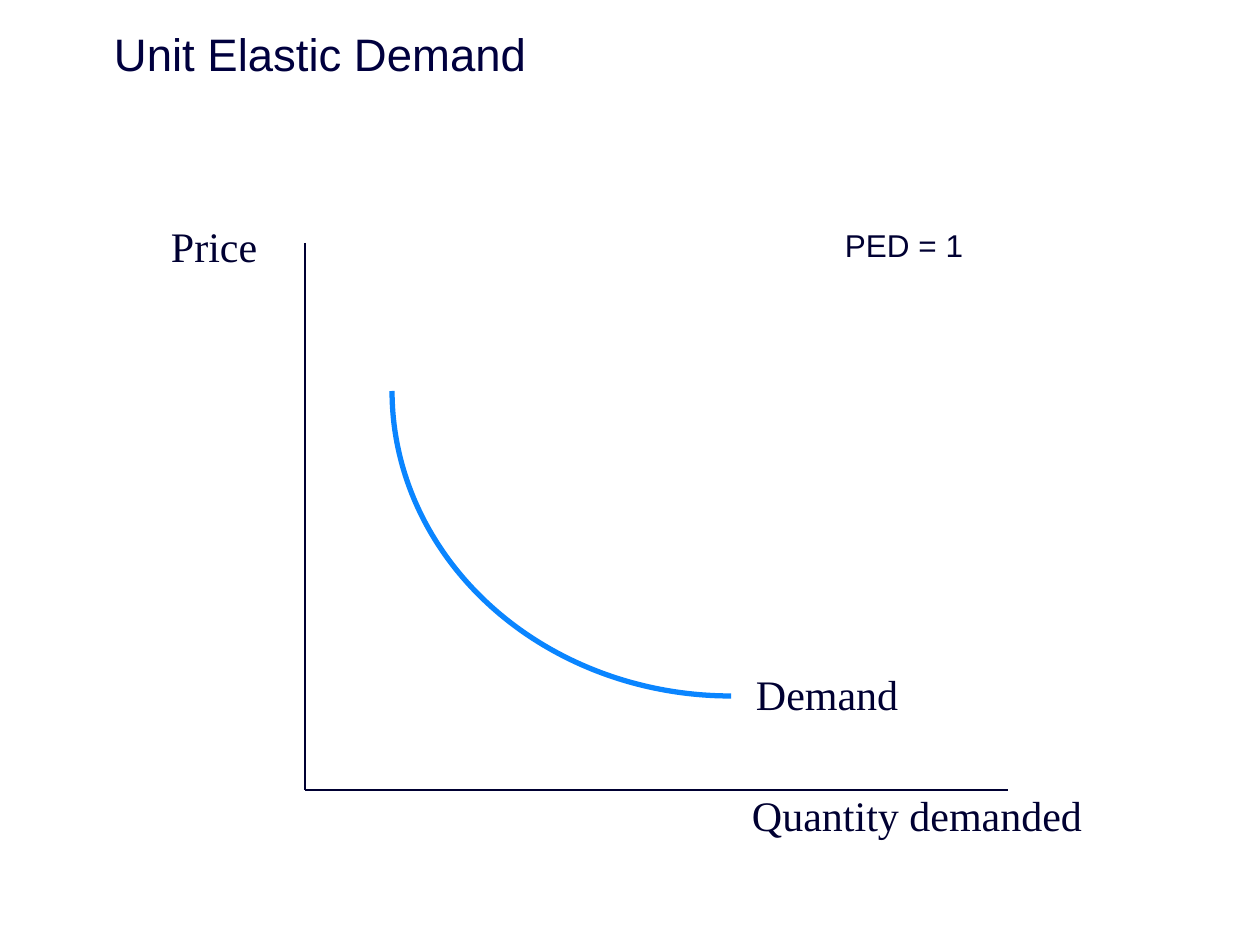
from lxml.etree import SubElement
from pptx import Presentation
from pptx.dml.color import RGBColor
from pptx.enum.shapes import MSO_CONNECTOR, MSO_SHAPE
from pptx.enum.text import MSO_ANCHOR
from pptx.oxml.ns import qn
from pptx.util import Emu, Pt

COLORS = {"title": "00003E", "ink": "000032", "curve": "0A85FF"}
EMU_PER_PX = 914400 / 126


def px(value):
    return Emu(round(value * EMU_PER_PX))


def add_text(text, box, font_name, size, color, margins, wrap=True):
    text_box = slide.shapes.add_textbox(*map(px, box))
    text_frame = text_box.text_frame
    text_frame.text = text
    text_frame.word_wrap = wrap
    text_frame.margin_left, text_frame.margin_top = px(margins[0]), px(margins[1])
    text_frame.margin_right, text_frame.margin_bottom = px(margins[2]), px(margins[3])
    font = text_frame.paragraphs[0].runs[0].font
    font.name = font_name
    font.size = Pt(size)
    font.color.rgb = RGBColor.from_string(COLORS[color])
    return text_frame


presentation = Presentation()
presentation.slide_width, presentation.slide_height = px(1260), px(945)
slide = presentation.slides.add_slide(presentation.slide_layouts[6])

# Title
title = add_text("Unit Elastic Demand", (63, -11, 1176, 129), "Arial", 26, "title", (51, 6, 18, 6))
title.vertical_anchor = MSO_ANCHOR.MIDDLE

# Axes
origin = (305, 790)
for start, end in (((305, 243), origin), (origin, (1008, 790))):
    axis = slide.shapes.add_connector(MSO_CONNECTOR.STRAIGHT, *map(px, start + end))
    axis.line.color.rgb = RGBColor.from_string(COLORS["ink"])
    axis.line.width = Pt(1)
    SubElement(axis._element.spPr, qn("a:effectLst"))

# Axis and curve labels
for label, box in (
    ("Demand", (751, 668, 164, 59)),
    ("Quantity demanded", (747, 790, 352, 59)),
    ("Price", (166, 220, 107, 59)),
):
    add_text(label, box, "Times New Roman", 24, "ink", (5, 0, 5, 0), wrap=False)

# Demand curve: a quarter arc turned to the lower left
curve = slide.shapes.add_shape(MSO_SHAPE.ARC, px(392), px(86), px(678), px(610))
curve.rotation = 180
curve.shadow.inherit = False
curve.fill.background()
curve.line.color.rgb = RGBColor.from_string(COLORS["curve"])
curve.line.width = Pt(3)

# Elasticity value
add_text("PED = 1", (832, 220, 373, 50), "Arial", 18, "ink", (13, 6, 13, 6))

presentation.save("out.pptx")
